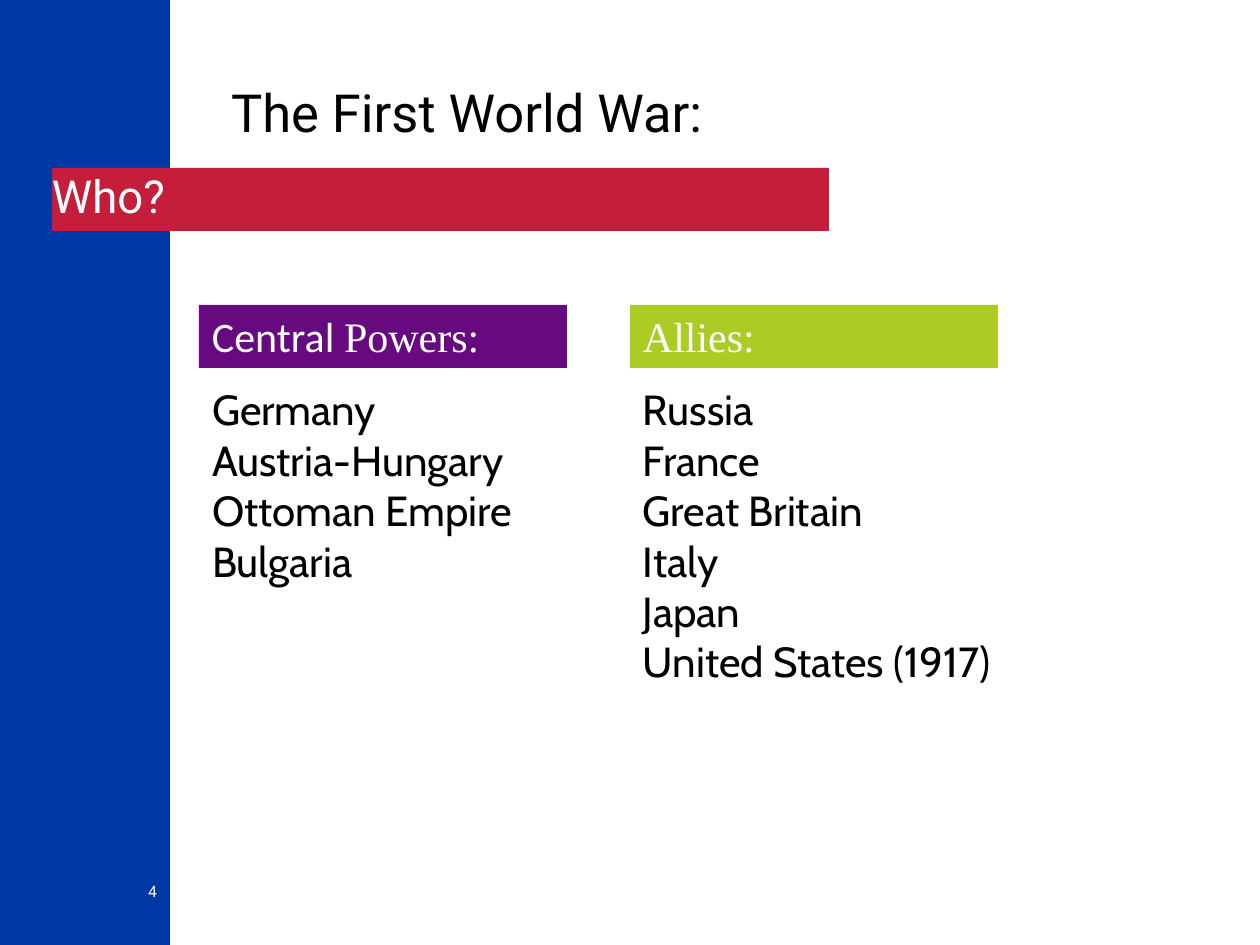
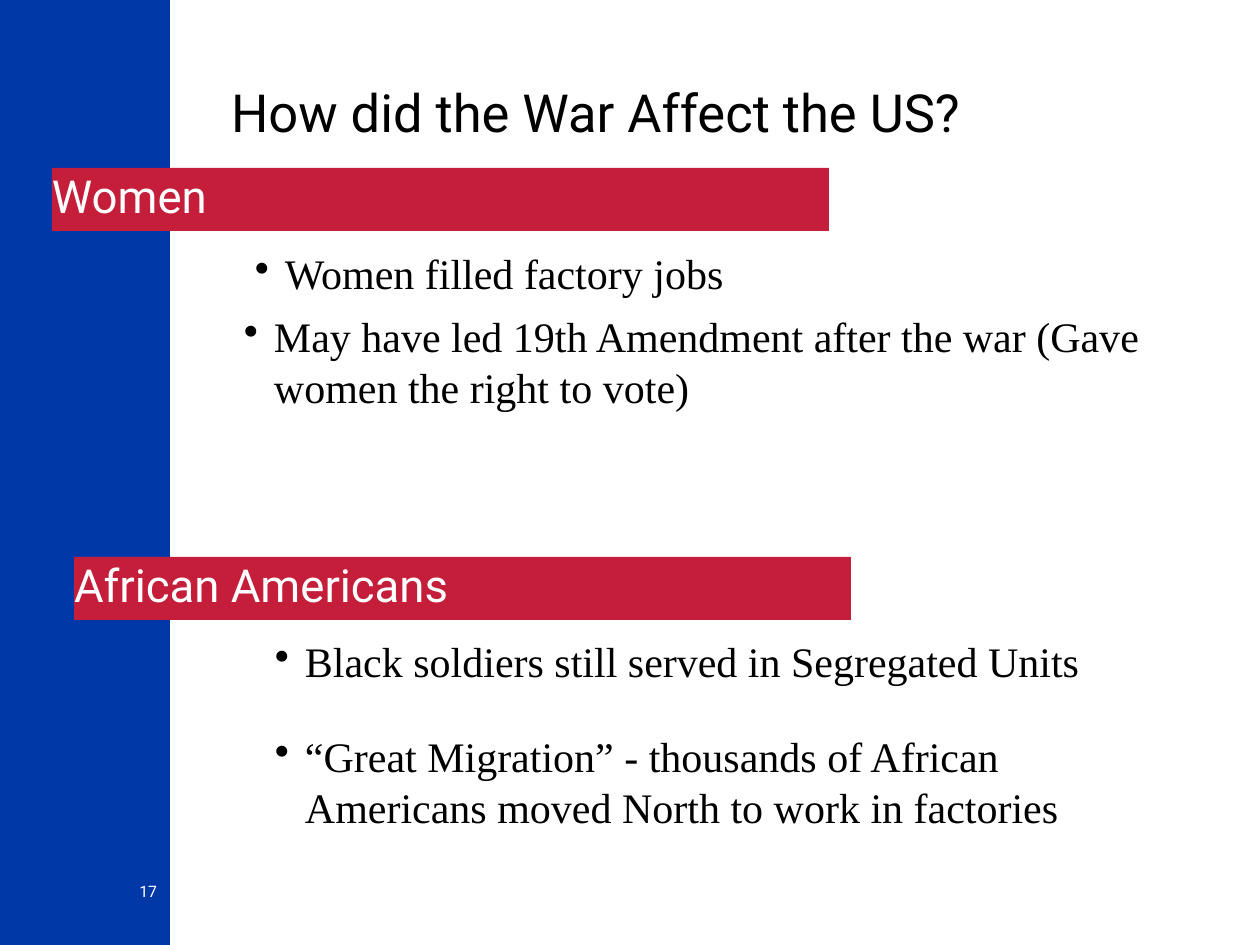
from lxml import etree
from pptx import Presentation
from pptx.dml.color import RGBColor
from pptx.enum.shapes import MSO_SHAPE
from pptx.enum.text import MSO_ANCHOR, MSO_AUTO_SIZE, PP_ALIGN
from pptx.oxml.ns import qn
from pptx.util import Emu, Pt

BLUE = RGBColor(0x00, 0x38, 0xA8)
RED = RGBColor(0xC4, 0x1E, 0x3A)
PURPLE = RGBColor(0x67, 0x09, 0x7F)
GREEN = RGBColor(0xAB, 0xCC, 0x25)
BLACK = RGBColor(0x00, 0x00, 0x00)
WHITE = RGBColor(0xFF, 0xFF, 0xFF)

HEADING_FONT, LIST_FONT, ACCENT_FONT, BODY_FONT = "Roboto", "Cabin", "Calibri", "Times New Roman"

# Alliances: heading colour, heading runs (text, font), members
ALLIANCES = [
    (PURPLE, [("Central ", ACCENT_FONT), ("Powers:", BODY_FONT)],
     ["Germany", "Austria-Hungary", "Ottoman Empire", "Bulgaria"]),
    (GREEN, [("Allies:", BODY_FONT)],
     ["Russia", "France", "Great Britain", "Italy", "Japan", "United States (1917)"]),
]

# Slides: title, page number, bands (left, top, text), bullets (left, top, lines, text), alliances
SLIDES = [
    ("The First World War:", "4", [(52, 168, "Who?")], [], ALLIANCES),
    ("How did the War Affect the US?", "17",
     [(52, 168, "Women"), (74, 557, "African Americans")],
     [(242, 242, 1, "Women filled factory jobs"),
      (231, 305, 2, "May have led 19th Amendment after the war (Gave women the right to vote)"),
      (262, 630, 1, "Black soldiers still served in Segregated Units"),
      (262, 725, 2, "“Great Migration” - thousands of African Americans moved North to work in factories")],
     []),
]

PX_PER_INCH = 126
PAGE_WIDTH, PAGE_HEIGHT = 1260, 945
SIDEBAR_WIDTH = 170
BAND_WIDTH, BAND_HEIGHT = 777, 63
TITLE_BOX = (231, 38, 935, 105)
NUMBER_BOX = (73, 882, 84, 42)
BULLET_WIDTH, BULLET_INDENT = 935, 30
COLUMN_LEFT, COLUMN_STEP = 199, 431
COLUMN_TOP, COLUMN_WIDTH, MEMBERS_TOP, MEMBERS_WIDTH = 305, 368, 378, 462
INSET_X, INSET_Y = 13, 6
TITLE_SIZE, BAND_SIZE, BODY_SIZE, NUMBER_SIZE = 30, 26, 24, 9
LEADING = 1.2


def px(length):
    return Emu(round(length * 914400 / PX_PER_INCH))


def text_height(lines):
    return round(lines * BODY_SIZE * LEADING * PX_PER_INCH / 72) + 2 * INSET_Y


def add_box(page, left, top, width, height, fill=None):
    """Add a filled rectangle, or a text box when no fill is given."""
    place = [px(length) for length in (left, top, width, height)]
    if fill is None:
        return page.shapes.add_textbox(*place)
    box = page.shapes.add_shape(MSO_SHAPE.RECTANGLE, *place)
    box.shadow.inherit = False
    box.fill.solid()
    box.fill.fore_color.rgb = fill
    box.line.fill.background()
    return box


def write(box, paragraphs, size, color, inset=(0, 0), align=PP_ALIGN.LEFT, anchor=MSO_ANCHOR.TOP):
    """Fill a box with paragraphs, each a list of (text, font) runs."""
    frame = box.text_frame
    frame.word_wrap = True
    frame.auto_size = MSO_AUTO_SIZE.NONE
    frame.vertical_anchor = anchor
    frame.margin_left = frame.margin_right = px(inset[0])
    frame.margin_top = frame.margin_bottom = px(inset[1])
    for index, runs in enumerate(paragraphs):
        para = frame.add_paragraph() if index else frame.paragraphs[0]
        para.alignment = align
        para.line_spacing = Pt(size * LEADING)
        para.space_before = Pt(0)
        for text, font in runs:
            span = para.add_run()
            span.text = text
            span.font.name = font
            span.font.size = Pt(size)
            span.font.color.rgb = color


def set_bullet(para):
    props = para._p.get_or_add_pPr()
    props.set("marL", str(px(BULLET_INDENT)))
    props.set("indent", str(-px(BULLET_INDENT)))
    etree.SubElement(props, qn("a:buChar")).set("char", "•")


def add_alliance(page, column, fill, heading, members):
    left = COLUMN_LEFT + column * COLUMN_STEP
    inset = (INSET_X, INSET_Y)
    box = add_box(page, left, MEMBERS_TOP, MEMBERS_WIDTH, text_height(len(members)), WHITE)
    write(box, [[(name, LIST_FONT)] for name in members], BODY_SIZE, BLACK, inset)
    box = add_box(page, left, COLUMN_TOP, COLUMN_WIDTH, BAND_HEIGHT, fill)
    write(box, [heading], BODY_SIZE, WHITE, inset)


def add_page(deck, title, number, bands, bullets, alliances):
    page = deck.slides.add_slide(deck.slide_layouts[5])
    heading = page.shapes.title
    heading.left, heading.top, heading.width, heading.height = map(px, TITLE_BOX)
    write(heading, [[(title, HEADING_FONT)]], TITLE_SIZE, BLACK, anchor=MSO_ANCHOR.BOTTOM)
    write(add_box(page, *NUMBER_BOX), [[(number, HEADING_FONT)]], NUMBER_SIZE, WHITE,
          align=PP_ALIGN.RIGHT)
    for left, top, text in bands:
        band = add_box(page, left, top, BAND_WIDTH, BAND_HEIGHT, RED)
        write(band, [[(text, HEADING_FONT)]], BAND_SIZE, WHITE)
    for left, top, lines, text in bullets:
        box = add_box(page, left, top, BULLET_WIDTH, text_height(lines))
        write(box, [[(text, BODY_FONT)]], BODY_SIZE, BLACK, (INSET_X, INSET_Y))
        set_bullet(box.text_frame.paragraphs[0])
    for column, alliance in enumerate(alliances):
        add_alliance(page, column, *alliance)
    return page


def add_sidebar(deck, page):
    """Draw the blue sidebar and move it to the master, behind every slide."""
    sidebar = add_box(page, 0, 0, SIDEBAR_WIDTH, PAGE_HEIGHT, BLUE)
    deck.slide_master.shapes.element.insert(2, sidebar.element)


def main():
    deck = Presentation()
    deck.slide_width, deck.slide_height = px(PAGE_WIDTH), px(PAGE_HEIGHT)
    pages = [add_page(deck, *content) for content in SLIDES]
    add_sidebar(deck, pages[0])
    deck.save("out.pptx")


if __name__ == "__main__":
    main()
